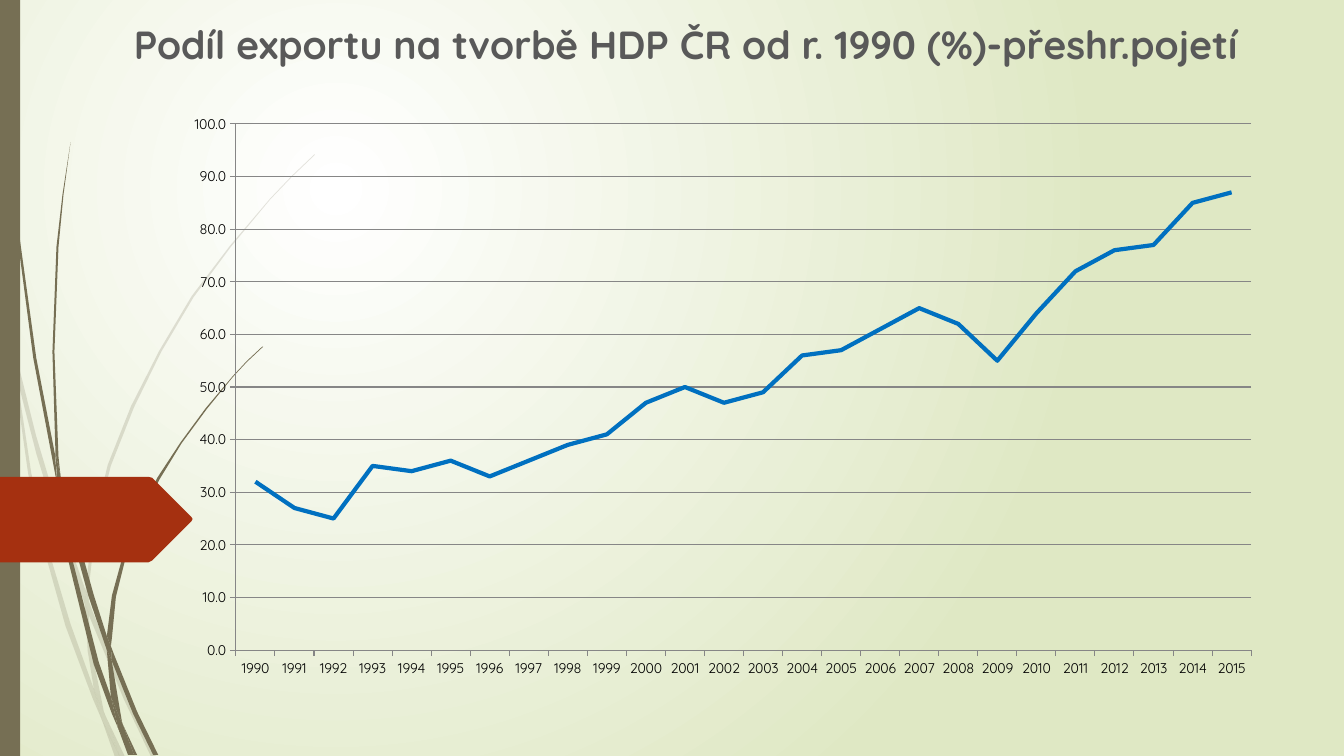
import pptx
import pptx.chart.data
import pptx.dml.color
import pptx.enum.chart
import pptx.enum.shapes
import pptx.enum.text
import pptx.oxml
import pptx.oxml.ns
import pptx.util
from pptx.util import Inches

THEME = {
    "font": "Quicksand",
    "title_size": 28,
    "chart_size": 10,
    "title": "595959",
    "chart_text": "000000",
    "grid": "868686",
    "line": "0070C0",
    "grass": "766F54",
    "pennant": "A53010",
    "glow": "FFFFFF",
    "backdrop": "DFE8C4",
}
NAMESPACES = pptx.oxml.ns.nsdecls("a", "p", "c")


def color(name):
    return pptx.dml.color.RGBColor.from_string(THEME[name])


def add_outline(slide, points, fill_name):
    corners = [(Inches(x), Inches(y)) for x, y in points]
    builder = slide.shapes.build_freeform(*corners[0])
    builder.add_line_segments(corners[1:], close=True)
    shape = builder.convert_to_shape()
    shape.shadow.inherit = False
    shape.fill.solid()
    shape.fill.fore_color.rgb = color(fill_name)
    shape.line.fill.background()
    return shape


presentation = pptx.Presentation()
presentation.slide_width = Inches(13.33)
presentation.slide_height = Inches(7.5)
slide = presentation.slides.add_slide(presentation.slide_layouts[6])

background = pptx.oxml.parse_xml(
    f'<p:bg {NAMESPACES}><p:bgPr><a:gradFill rotWithShape="1"><a:gsLst>'
    f'<a:gs pos="0"><a:srgbClr val="{THEME["glow"]}"/></a:gs>'
    f'<a:gs pos="100000"><a:srgbClr val="{THEME["backdrop"]}"/></a:gs></a:gsLst>'
    '<a:path path="circle"><a:fillToRect l="50000" t="50000" r="100000" b="100000"/></a:path>'
    '</a:gradFill><a:effectLst/></p:bgPr></p:bg>'
)
slide.element.cSld.insert(0, background)

faint_grass = [
    [(0.11, 3.5), (0.09, 3.22), (0, 2.82), (0, 2.99), (0.1, 3.44)],
    [(0.58, 5.22), (0.84, 5.99), (0.85, 5.86), (0.62, 5.2), (0.36, 4.33), (0.14, 3.45),
     (0.17, 3.76), (0.36, 4.5)],
    [(0.92, 6.07), (0.88, 5.96), (0.88, 6.1), (1.23, 6.94), (1.5, 7.51), (1.55, 7.51),
     (1.27, 6.92)],
    [(1.19, 7.51), (1.24, 7.51), (1.05, 7.11)],
    [(0.93, 6.83), (0.7, 6.19), (0.48, 5.45), (0.31, 4.69), (0.17, 3.76), (0.11, 3.5),
     (0.28, 4.7), (0.44, 5.46), (0.65, 6.21), (0.92, 6.93), (1.01, 7.14), (0.99, 7.07)],
    [(0.84, 5.99), (0.87, 6.46), (0.93, 6.83), (0.96, 6.92), (1.05, 7.11), (1.03, 7.06),
     (0.91, 6.46), (0.88, 6.1), (0.88, 6.08)],
    [(0.88, 5.84), (0.95, 5.22), (1.1, 4.62), (1.33, 4.04), (1.6, 3.49), (1.92, 2.95),
     (2.29, 2.45), (2.68, 1.98), (2.9, 1.75), (3.12, 1.54), (3.12, 1.53), (2.89, 1.75),
     (2.68, 1.97), (2.28, 2.44), (1.9, 2.94), (1.58, 3.48), (1.3, 4.03), (1.07, 4.61),
     (0.92, 5.22), (0.85, 5.84), (0.85, 5.86), (0.88, 5.96)],
    [(1.01, 7.14), (1.14, 7.51), (1.19, 7.51)],
    [(0.88, 6.08), (0.88, 6.1), (0.88, 5.96), (0.85, 5.86), (0.84, 5.99)],
    [(0.96, 6.92), (0.93, 6.83), (0.99, 7.07), (1.01, 7.14), (1.19, 7.51), (1.05, 7.11)],
]
dark_grass = [
    [(0.07, 1.1), (0.17, 2.33), (0.33, 3.55), (0.56, 4.77), (0.57, 4.81), (0.55, 4.57),
     (0.55, 4.53), (0.36, 3.55), (0.19, 2.32), (0.08, 1.09), (0.05, 0.48), (0.04, 0),
     (0.03, 0), (0.04, 0.48)],
    [(0.88, 5.92), (1.06, 6.45), (1.06, 6.33), (1.06, 6.31), (0.93, 5.9), (0.6, 4.72),
     (0.64, 5.05)],
    [(1.13, 6.49), (1.1, 6.41), (1.11, 6.56), (1.32, 7.08), (1.52, 7.49), (1.57, 7.49),
     (1.36, 7.06)],
    [(1.1, 6.91), (0.98, 6.57), (0.72, 5.56), (0.64, 5.05), (0.57, 4.77), (0.68, 5.57),
     (0.93, 6.59), (1.11, 7.08), (1.17, 7.22), (1.16, 7.17)],
    [(0.6, 4.72), (0.58, 4.53), (0.54, 3.49), (0.58, 2.45), (0.63, 1.93), (0.7, 1.41),
     (0.62, 1.93), (0.56, 2.45), (0.52, 3.49), (0.55, 4.49)],
    [(1.33, 7.49), (1.36, 7.49), (1.22, 7.19)],
    [(0.57, 4.77), (0.64, 5.05), (0.6, 4.72), (0.55, 4.49), (0.55, 4.53)],
    [(1.11, 6.33), (1.15, 5.92), (1.25, 5.52), (1.4, 5.13), (1.58, 4.76), (1.8, 4.4),
     (2.05, 4.06), (2.31, 3.74), (2.45, 3.59), (2.61, 3.44), (2.6, 3.44), (2.45, 3.58),
     (2.31, 3.73), (2.04, 4.05), (1.79, 4.39), (1.56, 4.74), (1.37, 5.12), (1.22, 5.51),
     (1.11, 5.91), (1.06, 6.31), (1.1, 6.41)],
    [(1.17, 7.22), (1.27, 7.49), (1.31, 7.49)],
    [(1.06, 6.45), (1.1, 6.91), (1.16, 7.06), (1.22, 7.19), (1.21, 7.16), (1.11, 6.56),
     (1.09, 6.51)],
    [(1.06, 6.45), (1.09, 6.51), (1.11, 6.56), (1.1, 6.41), (1.06, 6.31), (1.06, 6.33)],
    [(1.16, 7.06), (1.1, 6.91), (1.16, 7.17), (1.17, 7.22), (1.3, 7.49), (1.33, 7.49),
     (1.22, 7.19)],
]
for blades, alpha in ((faint_grass, 20000), (dark_grass, 100000)):
    for points in blades:
        blade = add_outline(slide, points, "grass")
        if alpha < 100000:
            tint = blade.element.spPr.find(".//" + pptx.oxml.ns.qn("a:srgbClr"))
            tint.append(pptx.oxml.parse_xml(f'<a:alpha {NAMESPACES} val="{alpha}"/>'))

side_bar = slide.shapes.add_shape(
    pptx.enum.shapes.MSO_SHAPE.RECTANGLE, 0, 0, Inches(0.2), Inches(7.5))
side_bar.shadow.inherit = False
side_bar.fill.solid()
side_bar.fill.fore_color.rgb = color("grass")
side_bar.line.fill.background()

add_outline(slide, [
    (0, 4.73), (1.47, 4.73), (1.51, 4.74), (1.9, 5.13), (1.91, 5.15),
    (1.9, 5.17), (1.51, 5.56), (1.47, 5.58), (0, 5.58),
], "pennant")

title = slide.shapes.add_textbox(Inches(1.23), Inches(0.15), Inches(11.81), Inches(0.72))
title.text_frame.word_wrap = True
title.text_frame.vertical_anchor = pptx.enum.text.MSO_ANCHOR.TOP
paragraph = title.text_frame.paragraphs[0]
paragraph.space_before = pptx.util.Pt(10)
run = paragraph.add_run()
run.text = "Podíl exportu na tvorbě HDP ČR od r. 1990 (%)-přeshr.pojetí"
run.font.name = THEME["font"]
run.font.size = pptx.util.Pt(THEME["title_size"])
run.font.bold = True
run.font.color.rgb = color("title")

export_share = [
    32, 27, 25, 35, 34, 36, 33, 36, 39, 41, 47, 50, 47,
    49, 56, 57, 61, 65, 62, 55, 64, 72, 76, 77, 85, 87,
]
chart_data = pptx.chart.data.CategoryChartData(number_format="0.0")
chart_data.categories = [str(year) for year in range(1990, 2016)]
chart_data.add_series("Series 1", export_share)
chart_left, chart_top, chart_width, chart_height = 1.71, 1.04, 10.92, 5.8
chart = slide.shapes.add_chart(
    pptx.enum.chart.XL_CHART_TYPE.LINE, Inches(chart_left), Inches(chart_top),
    Inches(chart_width), Inches(chart_height), chart_data).chart
chart.has_title = False
chart.has_legend = False
chart.font.name = THEME["font"]
chart.font.size = pptx.util.Pt(THEME["chart_size"])
chart.font.color.rgb = color("chart_text")
chart.plots[0].vary_by_categories = False

series = chart.plots[0].series[0]
series.smooth = False
series.marker.style = pptx.enum.chart.XL_MARKER_STYLE.NONE
series.format.line.color.rgb = color("line")
series.format.line.width = pptx.util.Pt(3)

value_axis = chart.value_axis
value_axis.minimum_scale = 0
value_axis.maximum_scale = 100
value_axis.major_unit = 10
value_axis.has_major_gridlines = True
value_axis.tick_labels.number_format = "0.0"
value_axis.tick_labels.number_format_is_linked = False
for axis in (value_axis, chart.category_axis):
    axis.major_tick_mark = pptx.enum.chart.XL_TICK_MARK.OUTSIDE
    axis.minor_tick_mark = pptx.enum.chart.XL_TICK_MARK.NONE
for ruled in (value_axis, chart.category_axis, value_axis.major_gridlines):
    ruled.format.line.color.rgb = color("grid")
    ruled.format.line.width = pptx.util.Pt(0.75)

plot_area = chart.element.find(".//" + pptx.oxml.ns.qn("c:plotArea"))
for layout in plot_area.findall(pptx.oxml.ns.qn("c:layout")):
    plot_area.remove(layout)
plot_area.insert(0, pptx.oxml.parse_xml(
    f'<c:layout {NAMESPACES}><c:manualLayout><c:layoutTarget val="inner"/>'
    '<c:xMode val="edge"/><c:yMode val="edge"/>'
    f'<c:x val="{(2.34 - chart_left) / chart_width}"/>'
    f'<c:y val="{(1.23 - chart_top) / chart_height}"/>'
    f'<c:w val="{10.07 / chart_width}"/><c:h val="{5.22 / chart_height}"/>'
    '</c:manualLayout></c:layout>'))

presentation.save("out.pptx")
